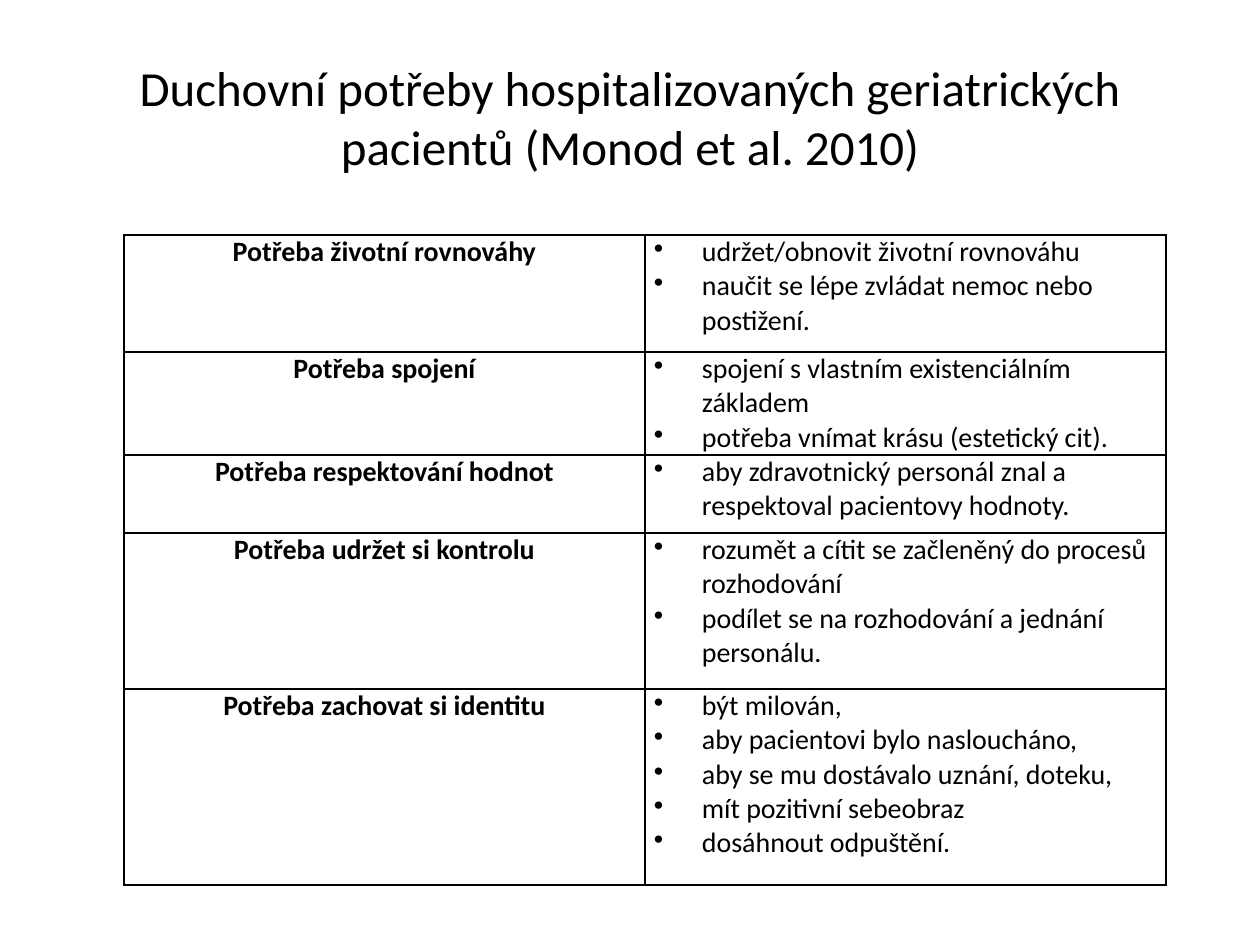
import pptx
import pptx.util
import pptx.dml.color
import pptx.enum.text
import pptx.oxml

TITLE = "Duchovní potřeby hospitalizovaných geriatrických pacientů (Monod et al. 2010)"
# need, row height in px, bullet points
NEEDS = [
    ("Potřeba životní rovnováhy", 117, [
        "udržet/obnovit životní rovnováhu",
        "naučit se lépe zvládat nemoc nebo postižení."]),
    ("Potřeba spojení", 103, [
        "spojení s vlastním existenciálním základem",
        "potřeba vnímat krásu (estetický cit)."]),
    ("Potřeba respektování hodnot", 78, [
        "aby zdravotnický personál znal a respektoval pacientovy hodnoty."]),
    ("Potřeba udržet si kontrolu", 156, [
        "rozumět a cítit se začleněný do procesů rozhodování",
        "podílet se na rozhodování a jednání personálu."]),
    ("Potřeba zachovat si identitu", 196, [
        "být milován,",
        "aby pacientovi bylo nasloucháno,",
        "aby se mu dostávalo uznání, doteku,",
        "mít pozitivní sebeobraz",
        "dosáhnout odpuštění."]),
]
FONT, BLACK = "Calibri", "000000"
TITLE_BOX = (63, 38, 1134, 157)
TABLE_LEFT, TABLE_TOP, COLUMN_WIDTH = 124, 235, 521
CELL_MARGIN, BULLET_INDENT = 9, 48
CENTER = pptx.enum.text.PP_ALIGN.CENTER
LEFT = pptx.enum.text.PP_ALIGN.LEFT
NAMESPACE = 'xmlns:a="http://schemas.openxmlformats.org/drawingml/2006/main"'


def px(length):
    return pptx.util.Emu(round(length * 914400 / 126))


def color(value):
    return pptx.dml.color.RGBColor.from_string(value)


def style(para, size, align, bold=False):
    para.alignment = align
    para.font.name = FONT
    para.font.size = pptx.util.Pt(size)
    para.font.bold = bold
    para.font.color.rgb = color(BLACK)


def add_bullet(para):
    properties = para._p.get_or_add_pPr()
    properties.set("marL", str(px(BULLET_INDENT)))
    properties.set("indent", str(-px(BULLET_INDENT)))
    bullet = pptx.oxml.parse_xml(f'<a:buChar {NAMESPACE} char="•"/>')
    properties.insert_element_before(bullet, "a:tabLst", "a:defRPr", "a:extLst")


def add_borders(cell):
    properties = cell._tc.get_or_add_tcPr()
    for index, side in enumerate(("lnL", "lnR", "lnT", "lnB")):
        properties.insert(index, pptx.oxml.parse_xml(
            f'<a:{side} {NAMESPACE} w="12700"><a:solidFill>'
            f'<a:srgbClr val="{BLACK}"/></a:solidFill></a:{side}>'))


def fill_cell(cell, lines, align, bold=False, bullets=False):
    cell.margin_left = cell.margin_right = px(CELL_MARGIN)
    cell.margin_top = cell.margin_bottom = 0
    cell.fill.background()
    add_borders(cell)
    frame = cell.text_frame
    frame.text = "\n".join(lines)
    for para in frame.paragraphs:
        style(para, 16, align, bold)
        if bullets:
            add_bullet(para)


deck = pptx.Presentation()
deck.slide_width, deck.slide_height = px(1260), px(945)
page = deck.slides.add_slide(deck.slide_layouts[6])

# Title
box = page.shapes.add_textbox(*map(px, TITLE_BOX))
frame = box.text_frame
frame.word_wrap = True
frame.vertical_anchor = pptx.enum.text.MSO_ANCHOR.MIDDLE
frame.text = TITLE
style(frame.paragraphs[0], 28, CENTER)

# Table of needs
table_height = sum(height for _, height, _ in NEEDS)
table = page.shapes.add_table(
    len(NEEDS), 2, px(TABLE_LEFT), px(TABLE_TOP),
    px(2 * COLUMN_WIDTH), px(table_height)).table
table.first_row = table.horz_banding = False
for column in table.columns:
    column.width = px(COLUMN_WIDTH)
for index, (need, height, points) in enumerate(NEEDS):
    table.rows[index].height = px(height)
    fill_cell(table.cell(index, 0), [need], CENTER, bold=True)
    fill_cell(table.cell(index, 1), points, LEFT, bullets=True)

deck.save("out.pptx")
